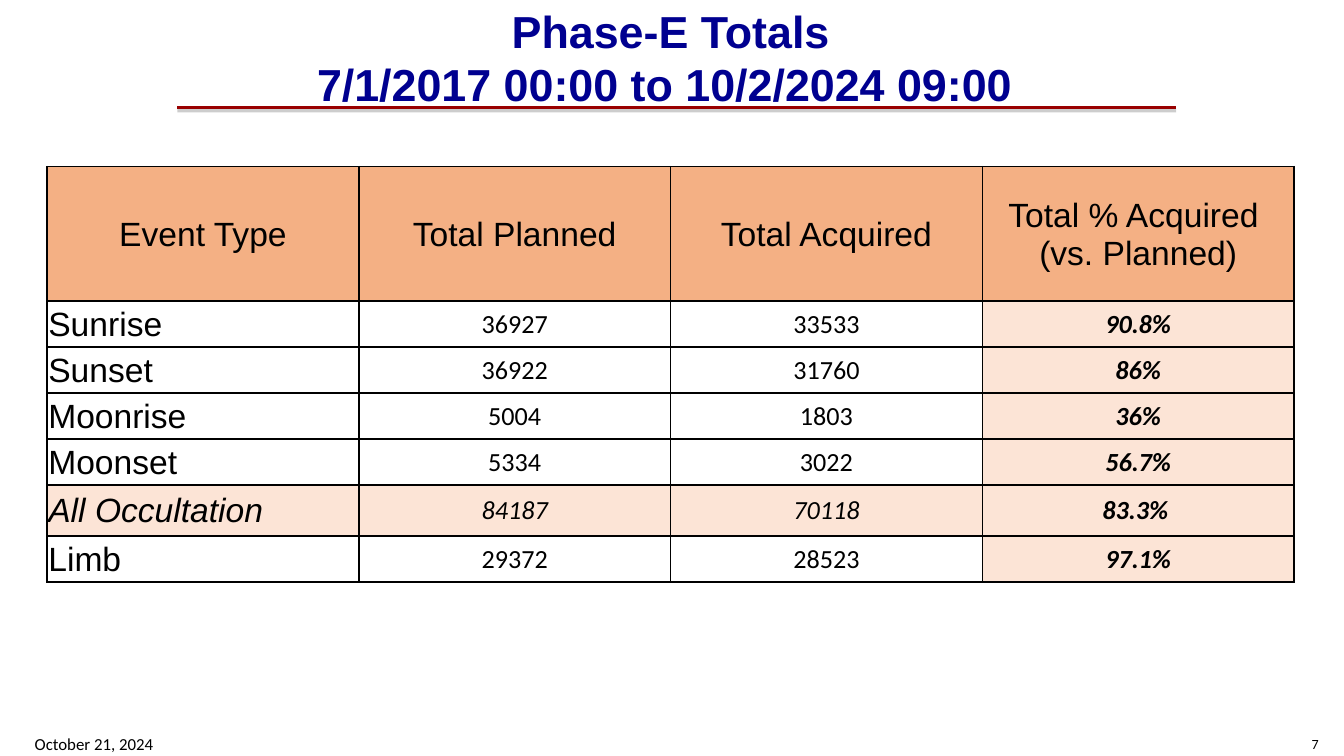
import pptx
import pptx.dml.color
import pptx.enum.shapes
import pptx.enum.text
import pptx.oxml
import pptx.oxml.ns
import pptx.util

Inches = pptx.util.Inches
Pt = pptx.util.Pt
ALIGN = pptx.enum.text.PP_ALIGN
MIDDLE = pptx.enum.text.MSO_ANCHOR.MIDDLE

COLORS = {
    "title": "000090",
    "rule": "990000",
    "shadow": "808080",
    "text": "000000",
    "header": "F4B084",
    "highlight": "FCE4D6",
}
HEADERS = ["Event Type", "Total Planned", "Total Acquired", "Total % Acquired \n(vs. Planned)"]
EVENTS = [
    ["Sunrise", "36927", "33533", "90.8%"],
    ["Sunset", "36922", "31760", "86%"],
    ["Moonrise", "5004", "1803", "36%"],
    ["Moonset", "5334", "3022", "56.7%"],
    ["All Occultation", "84187", "70118", "83.3% "],
    ["Limb", "29372", "28523", "97.1%"],
]
SUMMARY = "All Occultation"
HEADER_HEIGHT = 1
SUMMARY_HEIGHT = 0.38


def rgb(name):
    """Return the named colour."""
    return pptx.dml.color.RGBColor.from_string(COLORS[name])


def write(frame, text, size, font, color="text", align=ALIGN.LEFT, bold=False, italic=False):
    """Write one paragraph, with a line break between its lines."""
    frame.vertical_anchor = MIDDLE
    paragraph = frame.paragraphs[0]
    paragraph.alignment = align
    for index, line in enumerate(text.split("\n")):
        if index:
            paragraph.add_line_break()
        run = paragraph.add_run()
        run.text = line
        run.font.size = Pt(size)
        run.font.name = font
        run.font.bold = bold
        run.font.italic = italic
        run.font.color.rgb = rgb(color)


def add_title(slide, left, top, width, height):
    """Place the title and the shadowed rule beneath it."""
    title = slide.shapes.title
    title.left, title.top = Inches(left), Inches(top)
    title.width, title.height = Inches(width), Inches(height)
    title.text_frame.word_wrap = True
    title.text_frame.auto_size = pptx.enum.text.MSO_AUTO_SIZE.NONE
    write(title.text_frame, "Phase-E Totals\n7/1/2017 00:00 to 10/2/2024 09:00 ",
          24, "Arial", "title", ALIGN.CENTER, bold=True)

    rule_top = Inches(top + height + 0.11)
    rule = slide.shapes.add_connector(
        pptx.enum.shapes.MSO_CONNECTOR.STRAIGHT,
        Inches(left - 0.02), rule_top, Inches(left + width + 0.11), rule_top)
    rule.line.color.rgb = rgb("rule")
    rule.line.width = Pt(2)
    rule.element.spPr.append(pptx.oxml.parse_xml(
        f'<a:effectLst {pptx.oxml.ns.nsdecls("a")}>'
        f'<a:outerShdw blurRad="0" dist="{Pt(1.6)}" dir="5400000" rotWithShape="0">'
        f'<a:srgbClr val="{COLORS["shadow"]}"><a:alpha val="38000"/></a:srgbClr>'
        '</a:outerShdw></a:effectLst>'))


def add_borders(cell):
    """Draw a thin line on all four sides of a cell."""
    properties = cell._tc.get_or_add_tcPr()
    for index, side in enumerate("LRTB"):
        properties.insert(index, pptx.oxml.parse_xml(
            f'<a:ln{side} {pptx.oxml.ns.nsdecls("a")} w="{Pt(1)}"><a:solidFill>'
            f'<a:srgbClr val="{COLORS["text"]}"/></a:solidFill></a:ln{side}>'))


def style_cell(cell, fill):
    """Set the margins, fill and borders of a cell."""
    cell.margin_left = cell.margin_right = cell.margin_top = Inches(0.01)
    cell.margin_bottom = 0
    cell.vertical_anchor = MIDDLE
    if fill:
        cell.fill.solid()
        cell.fill.fore_color.rgb = rgb(fill)
    else:
        cell.fill.background()
    add_borders(cell)


def add_totals_table(slide, left, top, width, height):
    """Place the table of planned and acquired events."""
    rows = [HEADERS] + EVENTS
    table = slide.shapes.add_table(
        len(rows), len(HEADERS), Inches(left), Inches(top), Inches(width), Inches(height)).table
    table.first_row = False
    table.horz_banding = False
    for column in table.columns:
        column.width = Inches(width / len(HEADERS))
    event_height = (height - HEADER_HEIGHT - SUMMARY_HEIGHT) / (len(rows) - 2)
    for row_index, values in enumerate(rows):
        is_header = row_index == 0
        is_summary = values[0] == SUMMARY
        table.rows[row_index].height = Inches(
            HEADER_HEIGHT if is_header else SUMMARY_HEIGHT if is_summary else event_height)
        for column_index, value in enumerate(values):
            is_label = column_index == 0
            is_percent = column_index == len(HEADERS) - 1 and not is_header
            cell = table.cell(row_index, column_index)
            fill = "header" if is_header else "highlight" if is_summary or is_percent else None
            style_cell(cell, fill)
            size, font = (18, "Arial") if is_header or is_label else (14, "Calibri")
            align = ALIGN.LEFT if is_label and not is_header else ALIGN.CENTER
            write(cell.text_frame, value, size, font, align=align,
                  bold=is_percent, italic=is_percent or is_summary)


def add_footer(slide, left, top, width, height):
    """Place the date at the left and the slide number at the right."""
    box_width = 2.33
    for text, size, align, offset in (
            ("October 21, 2024", 9, ALIGN.LEFT, 0),
            ("7", 7.5, ALIGN.RIGHT, width - box_width)):
        box = slide.shapes.add_textbox(
            Inches(left + offset), Inches(top), Inches(box_width), Inches(height))
        box.text_frame.word_wrap = True
        write(box.text_frame, text, size, "Calibri", align=align)


def main():
    """Build and save the presentation."""
    presentation = pptx.Presentation()
    presentation.slide_width = Inches(10)
    presentation.slide_height = Inches(10 * 9 / 16)
    slide = presentation.slides.add_slide(presentation.slide_layouts[5])
    add_title(slide, 1.34, 0.16, 7.3, 0.53)
    add_totals_table(slide, 0.35, 1.24, 9.28, 3.09)
    add_footer(slide, 0.16, 5.44, 9.75, 0.19)
    presentation.save("out.pptx")


if __name__ == "__main__":
    main()
